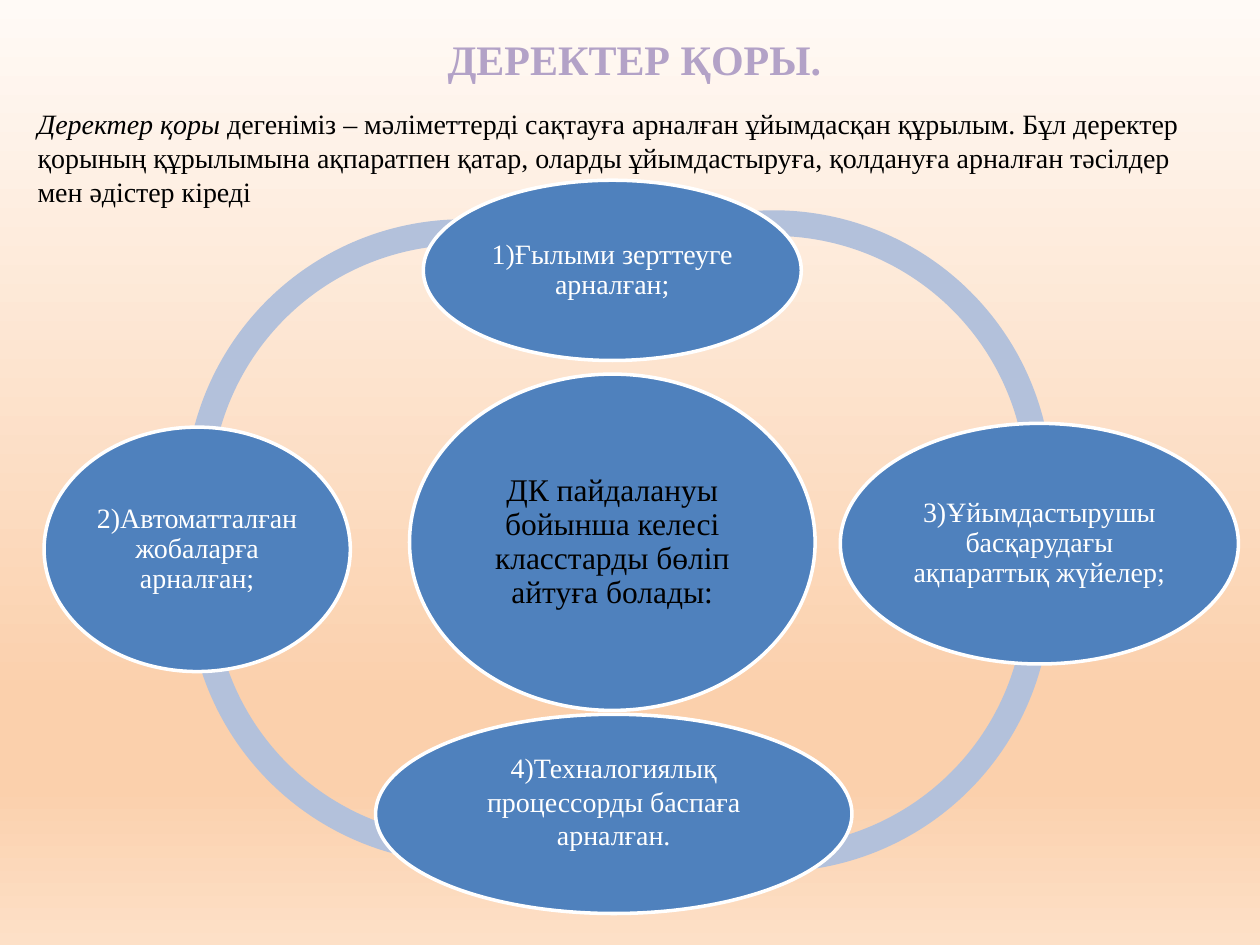
"""Builds the slide about databases and the four classes of their use."""
from lxml import etree
from pptx import Presentation
from pptx import util as u
from pptx.dml.color import RGBColor
from pptx.enum import shapes, text
from pptx.oxml import ns

Pt = u.Pt
FONT = "Times New Roman"
BLACK = RGBColor(0x00, 0x00, 0x00)
WHITE = RGBColor(0xFF, 0xFF, 0xFF)
LILAC = RGBColor(0xB3, 0xA2, 0xC7)
BLUE = RGBColor(0x4F, 0x81, 0xBD)
PALE_BLUE = RGBColor(0xB3, 0xC1, 0xDB)
BACKGROUND = [
    (0, RGBColor(0xFF, 0xFA, 0xF6)),
    (74, RGBColor(0xFB, 0xD0, 0xAC)),
    (83, RGBColor(0xFB, 0xD0, 0xAC)),
    (100, RGBColor(0xFD, 0xE0, 0xC7)),
]
ARC_SIZE = 318.24
ARC_THICKNESS = 0.05 - 0.004
ARCS = [
    (105.8, 125.3, 101.44, 181.79),
    (107.3, 175, 34.55, 112.39),
    (282.2, 180, 209.53, 75.59),
    (283, 120.2, 140.25, 6.82),
]
CENTRE = ("ДК пайдалануы бойынша келесі класстарды бөліп айтуға болады:",
          (234, 213.8, 231.8, 192.2))
CLASSES = [
    ("1)Ғылыми зерттеуге арналған;", (241.9, 103, 216, 103), {}),
    ("3)Ұйымдастырушы басқарудағы ақпараттық жүйелер;",
     (480.2, 241.9, 227.5, 137.5), {}),
    ("4)Техналогиялық процессорды баспаға арналған.",
     (214.6, 408.2, 272.2, 113.8), {"spacing": 1, "bottom": 16}),
    ("2)Автоматталған жобаларға арналған;", (25.2, 244.1, 175, 139.7), {}),
]


def set_all(target, values):
    """Set each attribute of the target from a dict."""
    for name, value in values.items():
        setattr(target, name, value)


def paint_background(page):
    """Fill the page with a vertical gradient."""
    fill = page.background.fill
    fill.gradient()
    fill.gradient_angle = 270
    stops = page.background._cSld.find(".//" + ns.qn("a:gsLst"))
    for stop in list(stops):
        stops.remove(stop)
    for percent, colour in BACKGROUND:
        stop = etree.SubElement(stops, ns.qn("a:gs"), pos=str(percent * 1000))
        etree.SubElement(stop, ns.qn("a:srgbClr"), val=str(colour))


def add_span(para, words, size, colour, **style):
    """Add a run of formatted words to the paragraph."""
    span = para.add_run()
    span.text = words
    set_all(span.font, {"name": FONT, "size": Pt(size), **style})
    span.font.color.rgb = colour


def add_text_box(page, place, wrap=True):
    """Add a text box and return its first paragraph."""
    frame = page.shapes.add_textbox(*map(Pt, place)).text_frame
    frame.word_wrap = wrap
    return frame.paragraphs[0]


def add_plain_shape(page, kind, place, colour):
    """Add a preset shape with a solid fill and neither line nor shadow."""
    shape = page.shapes.add_shape(kind, *map(Pt, place))
    shape.shadow.inherit = False
    shape.fill.solid()
    shape.fill.fore_color.rgb = colour
    shape.line.fill.background()
    return shape


def add_arc(page, left, top, start, end):
    """Add one arc of the ring."""
    arc = add_plain_shape(page, shapes.MSO_SHAPE.BLOCK_ARC,
                          (left, top, ARC_SIZE, ARC_SIZE), PALE_BLUE)
    for index, value in enumerate((start, end, ARC_THICKNESS)):
        arc.adjustments[index] = value


def add_ellipse(page, words, place, size=16, colour=WHITE, spacing=0.9, bottom=1.5):
    """Add a white-edged ellipse with centred words."""
    ellipse = add_plain_shape(page, shapes.MSO_SHAPE.OVAL, place, BLUE)
    ellipse.line.color.rgb = WHITE
    ellipse.line.width = Pt(2)
    frame = ellipse.text_frame
    set_all(frame, {
        "word_wrap": True,
        "vertical_anchor": text.MSO_ANCHOR.MIDDLE,
        "margin_left": Pt(1.5),
        "margin_right": Pt(1.5),
        "margin_top": Pt(1.5),
        "margin_bottom": Pt(bottom),
    })
    para = frame.paragraphs[0]
    set_all(para, {"alignment": text.PP_ALIGN.CENTER, "line_spacing": spacing})
    add_span(para, words, size, colour)


def main():
    """Build and save the deck."""
    deck = Presentation()
    set_all(deck, {"slide_width": Pt(720), "slide_height": Pt(540)})
    page = deck.slides.add_slide(deck.slide_layouts[6])
    paint_background(page)

    intro = add_text_box(page, (14.4, 57.6, 686.2, 65.5))
    add_span(intro, "Деректер қоры", 16, BLACK, italic=True)
    add_span(intro, " дегеніміз – мәліметтерді сақтауға арналған ұйымдасқан құрылым. "
             "Бұл деректер қорының құрылымына ақпаратпен қатар, оларды "
             "ұйымдастыруға, қолдануға арналған тәсілдер мен әдістер кіреді",
             16, BLACK)
    title = add_text_box(page, (247.7, 15.8, 229.7, 36), wrap=False)
    title.alignment = text.PP_ALIGN.CENTER
    add_span(title, "ДЕРЕКТЕР ҚОРЫ.", 24, LILAC, bold=True)

    for arc in ARCS:
        add_arc(page, *arc)
    add_ellipse(page, *CENTRE, size=18, colour=BLACK)
    for words, place, style in CLASSES:
        add_ellipse(page, words, place, **style)
    deck.save("out.pptx")


if __name__ == "__main__":
    main()
